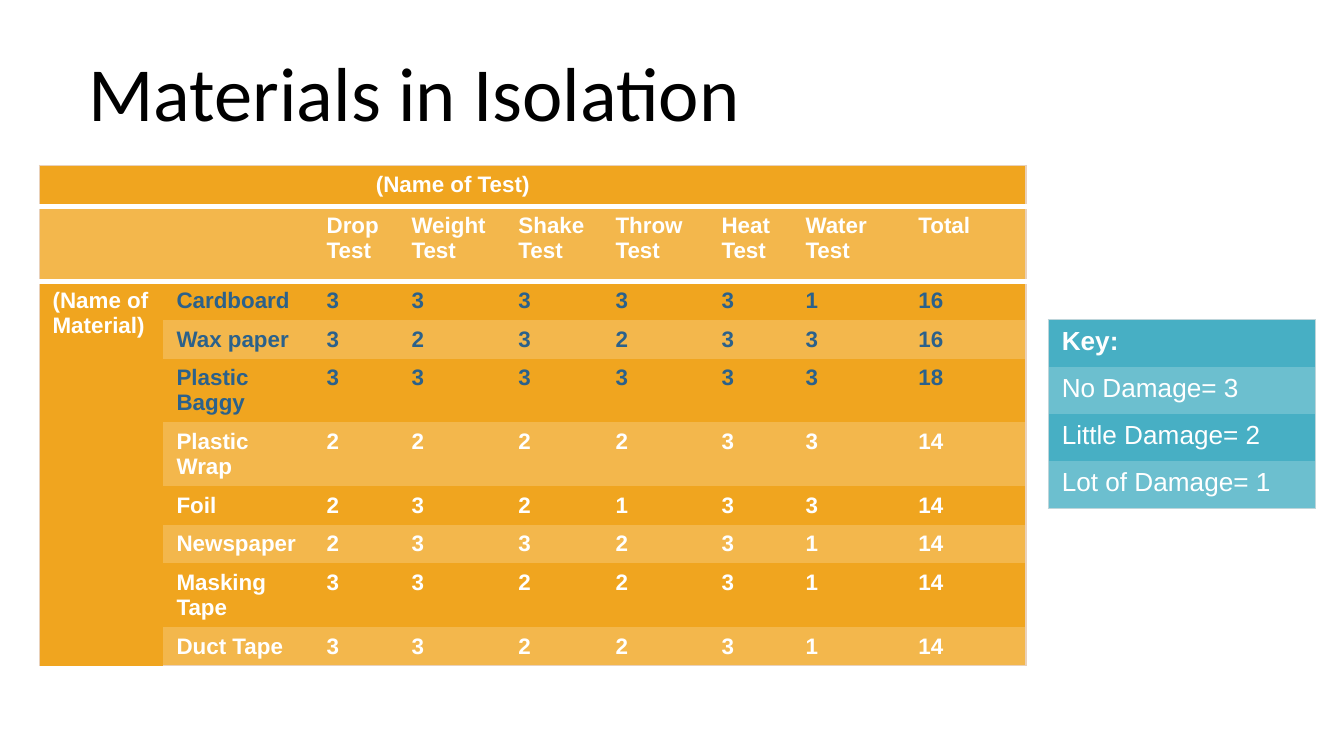
from dataclasses import dataclass

from lxml import etree
from pptx import Presentation
from pptx.dml.color import RGBColor
from pptx.enum.text import MSO_ANCHOR, PP_ALIGN
from pptx.oxml.ns import qn
from pptx.util import Pt

TOP = MSO_ANCHOR.TOP
LEFT = PP_ALIGN.LEFT
PLAIN_STYLE = "{2D5ABB26-0587-4C30-8999-92F81FD0307C}"
COLORS = {
    "black": "000000",
    "white": "FFFFFF",
    "highlight": "2B618B",
    "orange": "F0A51F",
    "orange_band": "F3B74C",
    "orange_edge": "E9D1BA",
    "teal": "47AFC4",
    "teal_band": "6CBFCF",
    "teal_edge": "BED5DA",
}
ONE_LINE, TWO_LINES = 20.7, 34.1


@dataclass
class Grid:
    left: float
    top: float
    cols: list[float]
    rows: list[float]
    theme: str
    size: float


@dataclass
class Material:
    name: str
    scores: list[int]
    total: int
    height: float = ONE_LINE
    color: str = "white"


RESULTS = Grid(21, 88.6, [66.4, 80.4, 45.5, 57.3, 52, 56.8, 45, 60.5, 64.8], [22, 40.2], "orange", 12)
KEY = Grid(561.6, 171.2, [143.3], [25.3] * 4, "teal", 14)
TESTS = ["Drop Test", "Weight Test", "Shake Test", "Throw Test", "Heat Test", "Water Test", "Total"]
MATERIALS = [
    Material("Cardboard", [3, 3, 3, 3, 3, 1], 16, color="highlight"),
    Material("Wax paper", [3, 2, 3, 2, 3, 3], 16, color="highlight"),
    Material("Plastic Baggy", [3, 3, 3, 3, 3, 3], 18, TWO_LINES, "highlight"),
    Material("Plastic Wrap", [2, 2, 2, 2, 3, 3], 14, TWO_LINES),
    Material("Foil", [2, 3, 2, 1, 3, 3], 14),
    Material("Newspaper", [2, 3, 3, 2, 3, 1], 14),
    Material("Masking Tape", [3, 3, 2, 2, 3, 1], 14, TWO_LINES),
    Material("Duct Tape", [3, 3, 2, 2, 3, 1], 14),
]
KEY_LINES = ["Key:", "No Damage= 3", "Little Damage= 2", "Lot of Damage= 1"]


def rgb(name: str) -> RGBColor:
    return RGBColor.from_string(COLORS[name])


def set_borders(cell, edges: dict[str, tuple[str, float]]) -> None:
    tc_pr = cell._tc.get_or_add_tcPr()
    lines = []
    for side in ("L", "R", "T", "B"):
        if side in edges:
            color, width = edges[side]
            ln = etree.Element(qn(f"a:ln{side}"), w=str(Pt(width)))
            fill = etree.SubElement(ln, qn("a:solidFill"))
            etree.SubElement(fill, qn("a:srgbClr"), val=COLORS[color])
            lines.append(ln)
    for i, ln in enumerate(lines):
        tc_pr.insert(i, ln)


def add_grid(s, grid: Grid):
    n_rows, n_cols = len(grid.rows), len(grid.cols)
    frame = s.shapes.add_table(n_rows, n_cols, Pt(grid.left), Pt(grid.top),
                               Pt(sum(grid.cols)), Pt(sum(grid.rows)))
    table = frame.table
    table._tbl.tblPr.find(qn("a:tableStyleId")).text = PLAIN_STYLE
    for col, width in zip(table.columns, grid.cols):
        col.width = Pt(width)
    for row, height in zip(table.rows, grid.rows):
        row.height = Pt(height)
    edge = (f"{grid.theme}_edge", 0.75)
    for r in range(n_rows):
        for c in range(n_cols):
            cell = table.cell(r, c)
            cell.fill.solid()
            cell.fill.fore_color.rgb = rgb(f"{grid.theme}_band" if r % 2 else grid.theme)
            outer = {"L": c == 0, "R": c == n_cols - 1, "T": r == 0, "B": r == n_rows - 1}
            set_borders(cell, {side: edge for side, on in outer.items() if on})
            write(cell, "", grid.size)
    return table


def write(cell, text: str, size: float, color: str = "white", bold: bool = True) -> None:
    p = cell.text_frame.paragraphs[0]
    p.text = text
    p.font.name = "Arial"
    p.font.size = Pt(size)
    p.font.bold = bold
    p.font.color.rgb = rgb(color)


def add_title(s, text: str) -> None:
    title = s.shapes.title
    title.left, title.top, title.width, title.height = Pt(42.5), Pt(21), Pt(507.6), Pt(77.8)
    tf = title.text_frame
    tf.text = text
    tf.vertical_anchor = TOP
    tf.margin_left = tf.margin_right = Pt(5)
    tf.margin_top = tf.margin_bottom = Pt(3)
    p = tf.paragraphs[0]
    p.alignment = LEFT
    p.font.name = "Calibri"
    p.font.size = Pt(41)
    p.font.color.rgb = rgb("black")


def add_results(s) -> None:
    RESULTS.rows += [m.height for m in MATERIALS]
    table = add_grid(s, RESULTS)
    size = RESULTS.size
    for cell in table.rows[0].cells:
        set_borders(cell, {"B": ("white", 3)})
    for cell in table.rows[1].cells:
        set_borders(cell, {"T": ("white", 3)})
    heading = table.cell(0, 1)
    heading.merge(table.cell(0, 7))
    heading.margin_left = Pt(114)
    write(heading, "(Name of Test)", size)
    for c, test in enumerate(TESTS, 2):
        write(table.cell(1, c), test, size)
    side = table.cell(2, 0)
    side.merge(table.cell(len(RESULTS.rows) - 1, 0))
    write(side, "(Name of Material)", size)
    for r, m in enumerate(MATERIALS, 2):
        for c, value in enumerate([m.name, *m.scores, m.total], 1):
            write(table.cell(r, c), str(value), size, m.color)


def add_key(s) -> None:
    table = add_grid(s, KEY)
    for r, line in enumerate(KEY_LINES):
        write(table.cell(r, 0), line, KEY.size, bold=r == 0)


def main() -> None:
    prs = Presentation()
    prs.slide_width, prs.slide_height = Pt(720), Pt(405)
    s = prs.slides.add_slide(prs.slide_layouts[5])
    add_title(s, "Materials in Isolation")
    add_results(s)
    add_key(s)
    prs.save("out.pptx")


if __name__ == "__main__":
    main()
